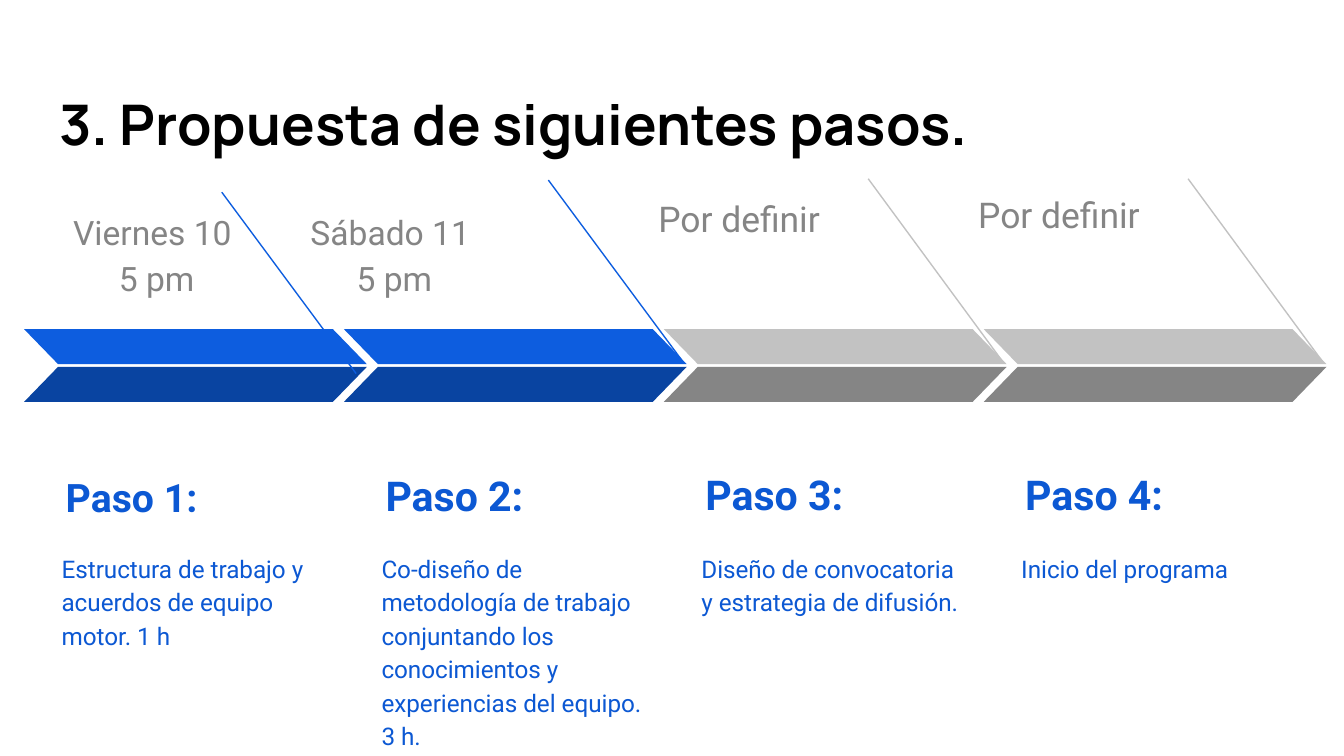
"""Build a slide with four proposed next steps along a chevron timeline."""
from dataclasses import dataclass

import pptx
import pptx.dml.color
import pptx.enum.shapes
import pptx.enum.text
import pptx.oxml.ns
import pptx.slide
import pptx.text.text
import pptx.util
from lxml import etree
from pptx.dml.color import RGBColor
from pptx.enum.text import MSO_ANCHOR, PP_ALIGN
from pptx.util import Inches

BLACK = RGBColor(0x00, 0x00, 0x00)
TEXT_BLUE = RGBColor(0x0C, 0x58, 0xD3)
BRIGHT_BLUE = RGBColor(0x0D, 0x5D, 0xDF)
DARK_BLUE = RGBColor(0x09, 0x44, 0xA1)
LIGHT_GREY = RGBColor(0xC2, 0xC2, 0xC2)
DARK_GREY = RGBColor(0x85, 0x85, 0x85)

FIRST_LEFT = 0.18
STEP_PITCH = 2.38
BAR_WIDTH, BAR_HEIGHT = 2.55, 0.26
UPPER_TOP, LOWER_TOP = 2.45, 2.73


@dataclass(frozen=True)
class Box:
    left: float
    top: float
    width: float
    height: float

    def lengths(self) -> tuple:
        return tuple(Inches(n) for n in (self.left, self.top, self.width, self.height))


@dataclass(frozen=True)
class Style:
    size: float
    color: RGBColor
    font: str = "Roboto"
    bold: bool = False
    align: PP_ALIGN = PP_ALIGN.LEFT
    anchor: MSO_ANCHOR = MSO_ANCHOR.TOP
    space_after: float = 0


@dataclass(frozen=True)
class Step:
    date: str
    date_box: Box
    date_style: Style
    heading: str
    heading_size: float
    heading_top: float
    task: str
    upper: RGBColor
    lower: RGBColor
    guide_start: tuple[float, float]
    guide_end: tuple[float, float]


FIXED = Style(18, DARK_GREY, align=PP_ALIGN.CENTER, space_after=16)
PENDING = Style(19, DARK_GREY, space_after=16)
STEPS = [
    Step("Viernes 10 \n5 pm", Box(0.34, 1.43, 1.65, 0.78), FIXED,
         "Paso 1:", 21, 3.16,
         "Estructura de trabajo y acuerdos de equipo motor. 1 h",
         BRIGHT_BLUE, DARK_BLUE, (1.65, 1.43), (2.65, 2.78)),
    Step("Sábado 11 \n5 pm", Box(2.11, 1.43, 1.65, 0.78), FIXED,
         "Paso 2:", 22, 3.16,
         "Co-diseño de metodología de trabajo conjuntando los conocimientos "
         "y experiencias del equipo.\n3 h.",
         BRIGHT_BLUE, DARK_BLUE, (4.08, 1.34), (5.08, 2.69)),
    Step("Por definir", Box(4.8, 1.32, 1.45, 0.68), PENDING,
         "Paso 3:", 22, 3.15,
         "Diseño de convocatoria y estrategia de difusión.",
         LIGHT_GREY, DARK_GREY, (6.46, 1.33), (7.46, 2.69)),
    Step("Por definir", Box(7.18, 1.29, 1.45, 0.68), PENDING,
         "Paso 4:", 22, 3.15,
         "Inicio del programa",
         LIGHT_GREY, DARK_GREY, (8.84, 1.33), (9.84, 2.69)),
]


def write(frame: pptx.text.text.TextFrame, wording: str, style: Style) -> None:
    frame.word_wrap = True
    frame.auto_size = pptx.enum.text.MSO_AUTO_SIZE.NONE
    frame.vertical_anchor = style.anchor
    frame.margin_left = frame.margin_right = Inches(0.1)
    frame.margin_top = frame.margin_bottom = Inches(0.1)
    paragraph = frame.paragraphs[0]
    paragraph.text = wording
    paragraph.alignment = style.align
    paragraph.line_spacing = 1.15
    paragraph.space_before = pptx.util.Pt(0)
    paragraph.space_after = pptx.util.Pt(style.space_after)
    paragraph.font.name = style.font
    paragraph.font.size = pptx.util.Pt(style.size)
    paragraph.font.bold = style.bold
    paragraph.font.color.rgb = style.color


def add_text(slide: pptx.slide.Slide, box: Box, wording: str, style: Style) -> None:
    write(slide.shapes.add_textbox(*box.lengths()).text_frame, wording, style)


def add_bar(slide: pptx.slide.Slide, box: Box, color: RGBColor, flipped: bool) -> None:
    bar = slide.shapes.add_shape(
        pptx.enum.shapes.MSO_SHAPE.PARALLELOGRAM, *box.lengths())
    bar.adjustments[0] = 0.97
    bar.shadow.inherit = False
    bar.fill.solid()
    bar.fill.fore_color.rgb = color
    bar.line.fill.background()
    if flipped:
        bar._element.spPr.xfrm.set("flipH", "1")


def add_guide(slide: pptx.slide.Slide, step: Step) -> None:
    ends = (Inches(n) for n in step.guide_start + step.guide_end)
    guide = slide.shapes.add_connector(
        pptx.enum.shapes.MSO_CONNECTOR.STRAIGHT, *ends)
    guide.line.color.rgb = step.upper
    guide.line.width = pptx.util.Pt(0.75)
    etree.SubElement(guide._element.spPr, pptx.oxml.ns.qn("a:effectLst"))


def add_step(slide: pptx.slide.Slide, step: Step, left: float) -> None:
    add_bar(slide, Box(left, UPPER_TOP, BAR_WIDTH, BAR_HEIGHT), step.upper, True)
    add_bar(slide, Box(left, LOWER_TOP, BAR_WIDTH, BAR_HEIGHT), step.lower, False)
    add_guide(slide, step)
    add_text(slide, step.date_box, step.date, step.date_style)
    add_text(slide, Box(left + 0.21, step.heading_top, 2.09, 0.81), step.heading,
             Style(step.heading_size, TEXT_BLUE, bold=True, anchor=MSO_ANCHOR.BOTTOM))
    add_text(slide, Box(left + 0.18, 3.99, 2.15, 1.34), step.task,
             Style(13, TEXT_BLUE))


def main() -> None:
    presentation = pptx.Presentation()
    presentation.slide_width = Inches(10)
    presentation.slide_height = Inches(10) * 9 // 16
    slide = presentation.slides.add_slide(presentation.slide_layouts[5])
    title = slide.shapes.title
    title.left, title.top, title.width, title.height = Box(0.34, 0.49, 9.32, 0.68).lengths()
    write(title.text_frame, "3. Propuesta de siguientes pasos.",
          Style(30, BLACK, font="Manrope", bold=True, space_after=16))
    for index, step in enumerate(STEPS):
        add_step(slide, step, FIRST_LEFT + index * STEP_PITCH)
    presentation.save("out.pptx")


if __name__ == "__main__":
    main()
